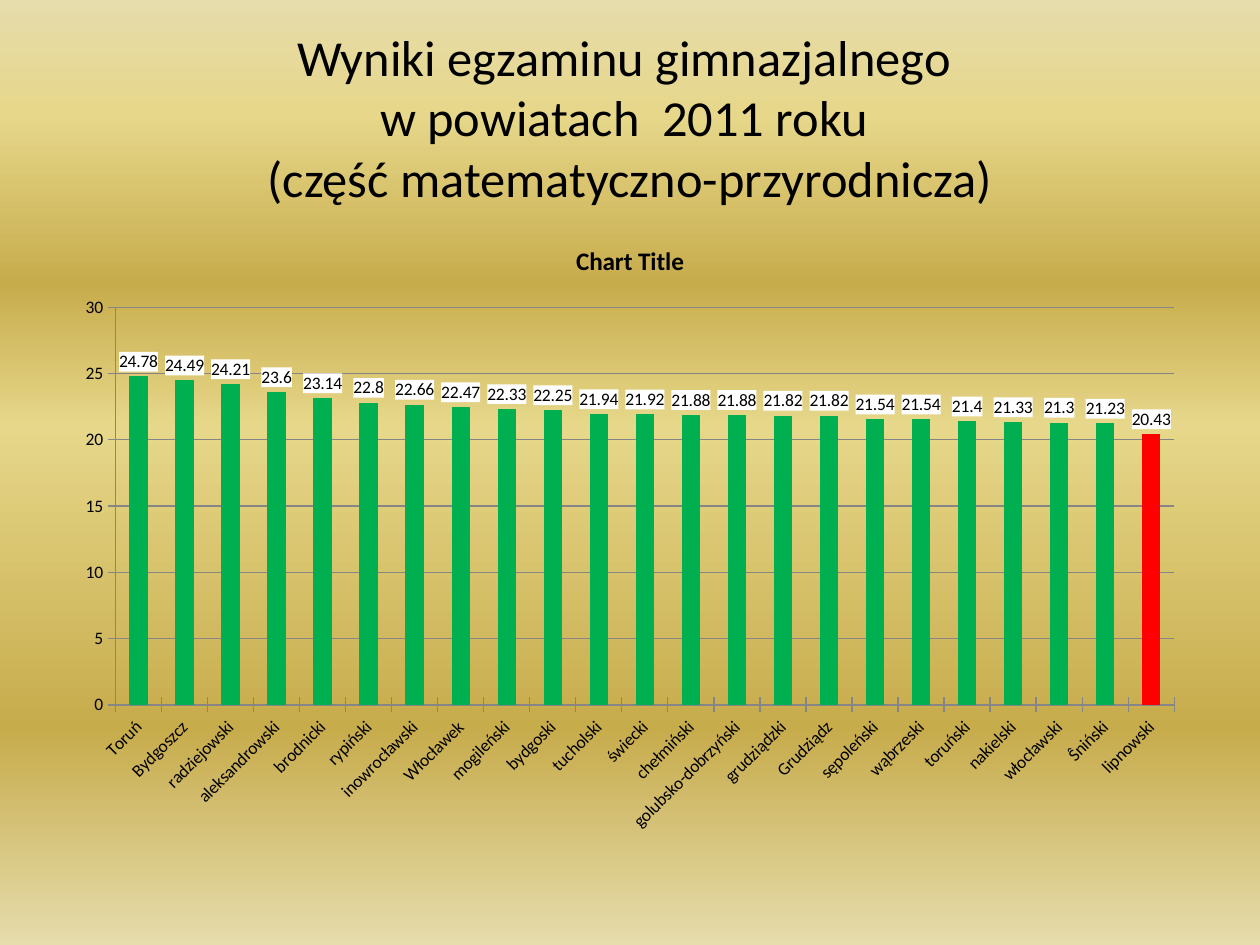
from copy import deepcopy

from lxml import etree
from pptx import Presentation
from pptx import util as u
from pptx.chart.data import CategoryChartData
from pptx.dml.color import RGBColor
from pptx.enum import chart as ch
from pptx.enum import text
from pptx.oxml import parse_xml
from pptx.oxml.ns import nsdecls, qn

WIDTH, HEIGHT = u.Inches(10), u.Inches(7.5)
FONT = "Calibri"
COLORS = {
    "ink": "000000", "bar": "00B050", "last": "FF0000", "label": "FFFFFF",
    "grid": "868686", "edge": "E6DCAC", "light": "E6D78A", "dark": "C7AC4C",
}
BACKDROP = [(0, "edge"), (0.12, "light"), (0.3, "dark"),
            (0.45, "light"), (0.77, "dark"), (1, "edge")]
TITLE = ("Wyniki egzaminu gimnazjalnego \vw powiatach  2011 roku \v"
         "(część matematyczno-przyrodnicza)")
RESULTS = {
    "Toruń": 24.78, "Bydgoszcz": 24.49, "radziejowski": 24.21,
    "aleksandrowski": 23.6, "brodnicki": 23.14, "rypiński": 22.8,
    "inowrocławski": 22.66, "Włocławek": 22.47, "mogileński": 22.33,
    "bydgoski": 22.25, "tucholski": 21.94, "świecki": 21.92,
    "chełmiński": 21.88, "golubsko-dobrzyński": 21.88, "grudziądzki": 21.82,
    "Grudziądz": 21.82, "sępoleński": 21.54, "wąbrzeski": 21.54,
    "toruński": 21.4, "nakielski": 21.33, "włocławski": 21.3,
    "Ŝniński": 21.23, "lipnowski": 20.43,
}


def rgb(name):
    """Return the named colour."""
    return RGBColor.from_string(COLORS[name])


def share(left, top, width, height):
    """Turn shares of the slide into a box of lengths."""
    return (int(left * WIDTH), int(top * HEIGHT),
            int(width * WIDTH), int(height * HEIGHT))


def style(font, size, bold=False):
    """Give a font the slide's typeface and ink."""
    font.name, font.size, font.bold = FONT, u.Pt(size), bold
    font.color.rgb = rgb("ink")


def paint_backdrop(slide):
    """Fill the background with horizontal gold bands."""
    fill = slide.background.fill
    fill.gradient()
    fill.gradient_angle = 270
    stops = slide.element.xpath(".//a:gsLst")[0]
    while len(stops) < len(BACKDROP):
        stops.append(deepcopy(stops[0]))
    for stop, (position, color) in zip(fill.gradient_stops, BACKDROP):
        stop.position = position
        stop.color.rgb = rgb(color)


def place_title(slide, box):
    """Set the centred heading in its placeholder."""
    title = slide.shapes.title
    title.left, title.top, title.width, title.height = box
    frame = title.text_frame
    frame.text = TITLE
    frame.word_wrap = True
    frame.auto_size = text.MSO_AUTO_SIZE.NONE
    frame.vertical_anchor = text.MSO_ANCHOR.MIDDLE
    heading = frame.paragraphs[0]
    heading.alignment = text.PP_ALIGN.CENTER
    for run in heading.runs:
        style(run.font, 28.8)


def format_axes(chart):
    """Style both axes and slant the county names."""
    for axis in (chart.category_axis, chart.value_axis):
        axis.major_tick_mark = ch.XL_TICK_MARK.CROSS
        axis.minor_tick_mark = ch.XL_TICK_MARK.NONE
        axis.format.line.color.rgb = rgb("grid")
        style(axis.tick_labels.font, 10)
    slant = chart.category_axis._element.find(qn("c:txPr")).find(qn("a:bodyPr"))
    slant.set("rot", "-2700000")
    values = chart.value_axis
    values.minimum_scale, values.maximum_scale, values.major_unit = 0, 30, 5
    values.has_major_gridlines = True
    values.major_gridlines.format.line.color.rgb = rgb("grid")


def format_bars(plot):
    """Colour the bars, mark the last county and label every value."""
    plot.gap_width = 150
    plot.vary_by_categories = False
    bars = plot.series[0]
    bars.invert_if_negative = False
    for part, color in ((bars, "bar"), (bars.points[len(RESULTS) - 1], "last")):
        part.format.fill.solid()
        part.format.fill.fore_color.rgb = rgb(color)
    labels = bars.data_labels
    labels.show_value = True
    labels.position = ch.XL_LABEL_POSITION.OUTSIDE_END
    style(labels.font, 10)
    plate = parse_xml(f'<c:spPr {nsdecls("c", "a")}><a:solidFill/></c:spPr>')
    etree.SubElement(plate[0], qn("a:srgbClr"), val=COLORS["label"])
    labels._element.find(qn("c:txPr")).addprevious(plate)


def place_chart(slide, box):
    """Draw the column chart of results by county."""
    data = CategoryChartData()
    data.categories = list(RESULTS)
    data.add_series("Series 1", list(RESULTS.values()))
    chart = slide.shapes.add_chart(
        ch.XL_CHART_TYPE.COLUMN_CLUSTERED, *box, data).chart
    style(chart.font, 10)
    chart.has_legend = False
    chart.has_title = True
    caption = chart.chart_title.text_frame
    caption.text = "Chart Title"
    style(caption.paragraphs[0].runs[0].font, 14.4, bold=True)
    format_axes(chart)
    format_bars(chart.plots[0])


def main():
    """Build the slide and save it."""
    deck = Presentation()
    deck.slide_width, deck.slide_height = WIDTH, HEIGHT
    slide = deck.slides.add_slide(deck.slide_layouts[5])
    paint_backdrop(slide)
    place_title(slide, share(0.05, 0.04, 0.9, 1 / 6))
    place_chart(slide, share(0.05, 7 / 30, 0.9, 0.66))
    deck.save("out.pptx")


if __name__ == "__main__":
    main()
